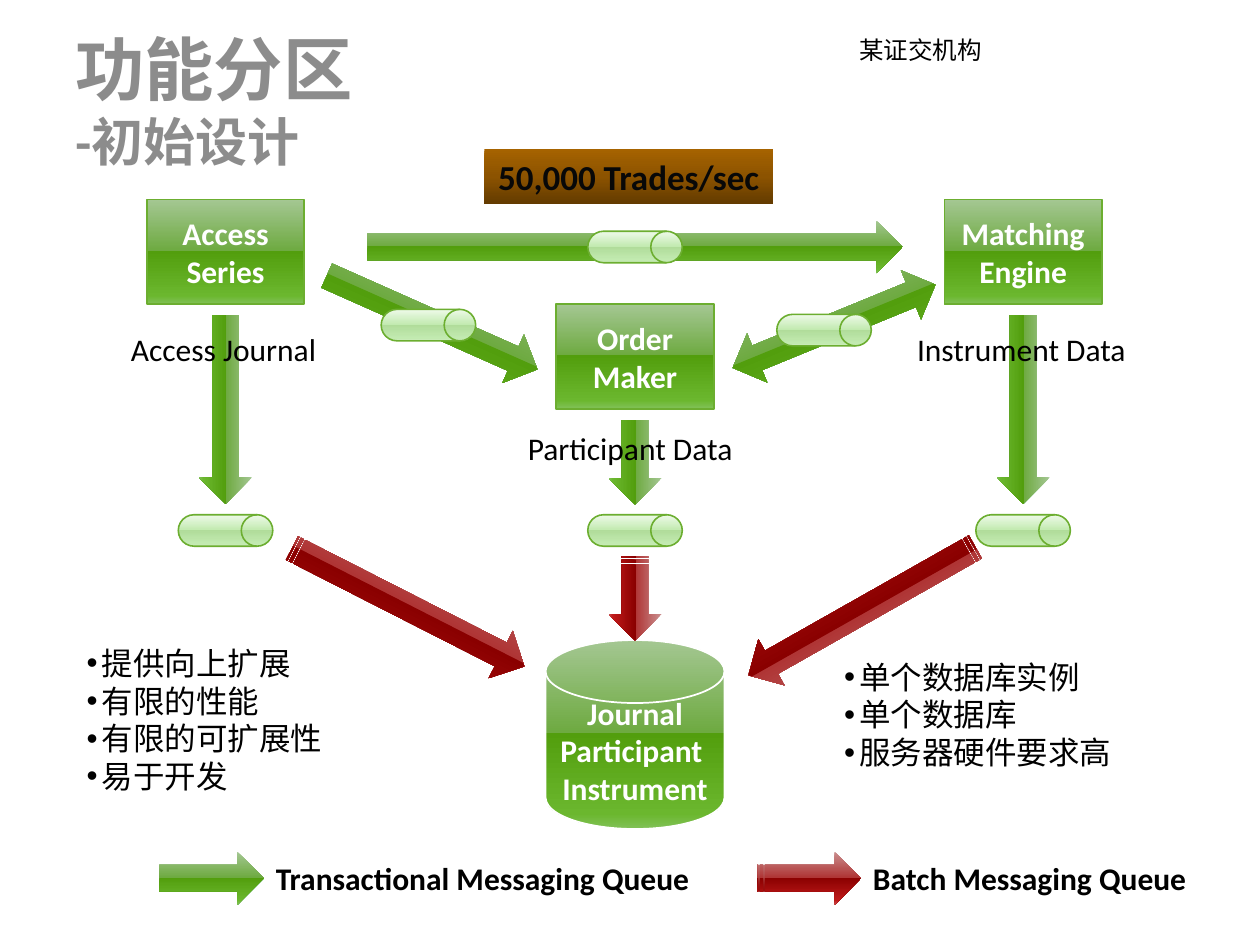
from lxml.etree import SubElement
from pptx import Presentation
from pptx.dml.color import RGBColor
from pptx.enum.shapes import MSO_SHAPE as Shape
from pptx.enum.text import MSO_ANCHOR as Anchor, MSO_AUTO_SIZE as AutoSize, PP_ALIGN as Align
from pptx.oxml.ns import qn
from pptx.util import Inches, Pt

FONT = "Calibri"
BLACK = RGBColor(0x00, 0x00, 0x00)
NEAR_BLACK = RGBColor(0x08, 0x08, 0x08)
WHITE = RGBColor(0xFF, 0xFF, 0xFF)
GREY = RGBColor(0x8C, 0x8C, 0x8C)
GREEN_LINE = RGBColor(0x6C, 0xAE, 0x30)


def stops(positions, colours):
    return [(at, RGBColor.from_string(code)) for at, code in zip(positions, colours.split())]


# Gradients run from top to bottom
GLOSS = (0, 49, 49, 92, 100)
GREEN = stops(GLOSS, "A4C792 6EAA41 529E0D 6BB72E 81C158")
RED = stops(GLOSS, "CA8E8E AF3535 8A0000 BF1A1A C74F4F")
PALE = stops(GLOSS, "EEFAE9 C2EAB0 B0DC9A C2EAB0 CDEBBE")
BROWN = stops((0, 50, 100), "A66300 8C5300 633B00")

# Centre lines of the three columns
LEFT_X, MID_X, RIGHT_X = 1.79, 5.04, 8.12


def add_span(para, text, size, colour, bold=False):
    span = para.add_run()
    span.text = text
    span.font.name = FONT
    span.font.size = Pt(size)
    span.font.bold = bold
    span.font.color.rgb = colour


def fill_gradient(shape, gradient):
    shape.fill.gradient()
    shape.fill.gradient_angle = 270
    stop_list = shape._element.spPr.find(qn("a:gradFill")).find(qn("a:gsLst"))
    for old in list(stop_list):
        stop_list.remove(old)
    for at, colour in gradient:
        stop = SubElement(stop_list, qn("a:gs"), pos=str(at * 1000))
        SubElement(stop, qn("a:srgbClr"), val=str(colour))


def add_shape(page, kind, centre, size, gradient, line=None, line_width=0.9):
    (x, y), (width, height) = centre, size
    shape = page.shapes.add_shape(kind, Inches(x - width / 2), Inches(y - height / 2),
                                  Inches(width), Inches(height))
    shape.shadow.inherit = False
    fill_gradient(shape, gradient)
    if line is None:
        shape.line.fill.background()
    else:
        shape.line.color.rgb = line
        shape.line.width = Pt(line_width)
    return shape


def write_centred(shape, lines, size, colour):
    frame = shape.text_frame
    frame.vertical_anchor = Anchor.MIDDLE
    for index, text in enumerate(lines):
        para = frame.add_paragraph() if index else frame.paragraphs[0]
        para.alignment = Align.CENTER
        add_span(para, text, size, colour, bold=True)


def add_process(page, x, y, text):
    box = add_shape(page, Shape.FLOWCHART_PROCESS, (x, y), (1.25, 0.83), GREEN, GREEN_LINE)
    write_centred(box, [text], 18, WHITE)


def add_arrow(page, x, y, length, rotation=0, kind=Shape.RIGHT_ARROW, gradient=GREEN):
    arrow = add_shape(page, kind, (x, y), (length, 0.42), gradient)
    arrow.rotation = rotation


def add_batch_arrow(page, x, y, length, rotation=0):
    add_arrow(page, x, y, length, rotation, Shape.STRIPED_RIGHT_ARROW, RED)


def add_queue(page, x, y):
    add_shape(page, Shape.FLOWCHART_DIRECT_ACCESS_STORAGE, (x, y), (0.75, 0.25), PALE, GREEN_LINE)


def add_text_box(page, left, top, width, height, wrap=False):
    box = page.shapes.add_textbox(Inches(left), Inches(top), Inches(width), Inches(height))
    box.text_frame.word_wrap = wrap
    box.text_frame.auto_size = AutoSize.SHAPE_TO_FIT_TEXT
    return box.text_frame


def add_label(page, left, top, width, text, size=18, bold=False, height=0.4, wrap=False):
    frame = add_text_box(page, left, top, width, height, wrap)
    add_span(frame.paragraphs[0], text, size, BLACK, bold)


def add_bullets(page, left, top, width, height, items):
    frame = add_text_box(page, left, top, width, height)
    for index, text in enumerate(items):
        para = frame.add_paragraph() if index else frame.paragraphs[0]
        properties = para._p.get_or_add_pPr()
        properties.set("marL", str(Inches(0.12)))
        properties.set("indent", str(Inches(-0.12)))
        SubElement(properties, qn("a:buFont"), typeface="Arial")
        SubElement(properties, qn("a:buChar"), char="•")
        add_span(para, text, 18, BLACK)


def add_title(page):
    frame = add_text_box(page, 0.5, 0.16, 9, 1.25, wrap=True)
    frame.auto_size = AutoSize.NONE
    frame.vertical_anchor = Anchor.MIDDLE
    para = frame.paragraphs[0]
    add_span(para, "功能分区", 39.6, GREY, bold=True)
    para.add_line_break()
    add_span(para, "-初始设计", 29.7, GREY, bold=True)


def main():
    deck = Presentation()
    deck.slide_width, deck.slide_height = Inches(10), Inches(7.5)
    page = deck.slides.add_slide(deck.slide_layouts[6])
    add_title(page)

    # Components and the shared database
    add_process(page, LEFT_X, 2, "Access Series")
    add_process(page, MID_X, 2.83, "Order Maker")
    add_process(page, RIGHT_X, 2, "Matching Engine")
    database = add_shape(page, Shape.FLOWCHART_MAGNETIC_DISK, (MID_X, 5.83), (1.42, 1.5),
                         GREEN, WHITE, 1)
    write_centred(database, ["Journal", "Participant ", "Instrument"], 18, WHITE)

    # Transactional flows between components and down to the queues
    add_arrow(page, MID_X, 1.96, 4.25)
    add_arrow(page, 3.43, 2.56, 1.83, 24)
    add_arrow(page, 6.62, 2.59, 1.74, 337.7, Shape.LEFT_RIGHT_ARROW)
    add_arrow(page, LEFT_X, 3.25, 1.5, 90)
    add_arrow(page, MID_X, 3.67, 0.67, 90)
    add_arrow(page, RIGHT_X, 3.25, 1.5, 90)

    # Batch flows into the database
    add_batch_arrow(page, 3.24, 4.82, 2.07, 27)
    add_batch_arrow(page, MID_X, 4.75, 0.67, 90)
    add_batch_arrow(page, 6.84, 4.85, 2.07, 150.5)

    # Message queues
    for x, y in ((3.4, 2.58), (6.54, 2.62), (MID_X, 1.96)):
        add_queue(page, x, y)
    for x in (LEFT_X, MID_X, RIGHT_X):
        add_queue(page, x, 4.21)

    # Notes beside the database
    add_bullets(page, 6.6, 5.17, 2.35, 1.01, ["单个数据库实例", "单个数据库", "服务器硬件要求高"])
    add_bullets(page, 0.59, 5.06, 2.1, 1.31,
                ["提供向上扩展", "有限的性能", "有限的可扩展性", "易于开发"])

    # Data labels
    add_label(page, 0.94, 2.57, 1.69, "Access Journal")
    add_label(page, 4.09, 3.36, 1.85, "Participant Data")
    add_label(page, 7.18, 2.57, 1.88, "Instrument Data")
    add_label(page, 6.72, 0.23, 1.53, "某证交机构", size=14, height=0.34, wrap=True)

    # Throughput banner
    banner = add_shape(page, Shape.RECTANGLE, (4.99, 1.4), (2.29, 0.44), BROWN)
    banner.text_frame.word_wrap = False
    write_centred(banner, ["50,000 Trades/sec"], 20, NEAR_BLACK)

    # Legend
    add_arrow(page, 1.68, 6.97, 0.83)
    add_label(page, 2.09, 6.77, 3.51, "Transactional Messaging Queue", bold=True)
    add_batch_arrow(page, 6.42, 6.97, 0.83)
    add_label(page, 6.83, 6.77, 2.99, "Batch Messaging Queue", bold=True, wrap=True)

    deck.save("out.pptx")


if __name__ == "__main__":
    main()
